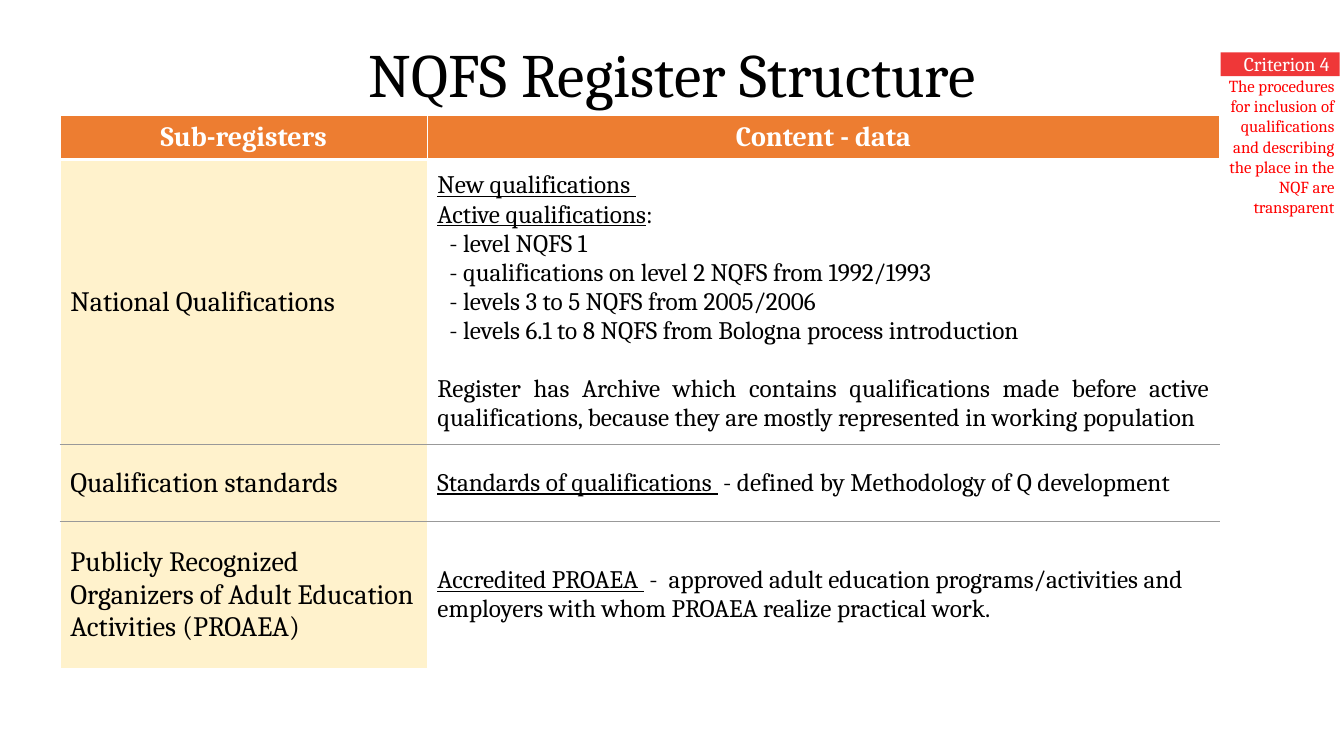
from dataclasses import dataclass

from lxml import etree
from pptx import Presentation
from pptx import util as u
from pptx.dml.color import RGBColor
from pptx.enum import shapes, text
from pptx.oxml import ns

FONT = "Cambria"
BLACK = RGBColor(0x00, 0x00, 0x00)
WHITE = RGBColor(0xFF, 0xFF, 0xFF)
ORANGE = RGBColor(0xED, 0x7D, 0x31)
CREAM = RGBColor(0xFF, 0xF2, 0xCC)
GREY = RGBColor(0x99, 0x99, 0x99)
BADGE_RED = RGBColor(0xEF, 0x37, 0x38)
RED = RGBColor(0xFF, 0x00, 0x00)
ALIGN = text.PP_ALIGN


@dataclass(frozen=True)
class Style:
    size: float
    color: RGBColor = BLACK
    bold: bool = False


@dataclass(frozen=True)
class Line:
    """A paragraph whose opening words may be underlined."""
    plain: str = ""
    underlined: str = ""
    align: ALIGN = ALIGN.LEFT
    indent: float = 0
    before: float = 0


@dataclass(frozen=True)
class Row:
    register: str
    height: float
    content: tuple[Line, ...]


@dataclass(frozen=True)
class Edge:
    color: RGBColor
    width: float


HEADER = Style(20, WHITE, True)
REGISTER = Style(20)
CONTENT = Style(18)
THIN = Edge(WHITE, 1)
THICK = Edge(WHITE, 3)
RULE = Edge(GREY, 0.75)

LEVELS = (
    "- level NQFS 1",
    "- qualifications on level 2 NQFS from 1992/1993",
    "- levels 3 to 5 NQFS from 2005/2006",
    "- levels 6.1 to 8 NQFS from Bologna process introduction",
)
HEADINGS = ("Sub-registers", "Content - data")
HEADER_HEIGHT = 1.02
COLUMN_WIDTHS = (9.25, 19.96)
ROWS = (
    Row("National Qualifications", 7.19, (
        Line(underlined="New qualifications "),
        Line(":", "Active qualifications"),
        *(Line(level, indent=0.3) for level in LEVELS),
        Line("Register has Archive which contains qualifications made before "
             "active qualifications, because they are mostly represented in "
             "working population", align=ALIGN.JUSTIFY, before=21),
    )),
    Row("Qualification standards", 1.93, (
        Line(" - defined by Methodology of Q development",
             "Standards of qualifications "),
    )),
    Row("Publicly Recognized Organizers of Adult Education Activities (PROAEA)",
        3.71, (
            Line(" -  approved adult education programs/activities and employers "
                 "with whom PROAEA realize practical work.", "Accredited PROAEA "),
        )),
)


def write(frame, lines: tuple[Line, ...], style: Style) -> None:
    for number, line in enumerate(lines):
        para = frame.paragraphs[0] if number == 0 else frame.add_paragraph()
        para.alignment = line.align
        if line.before:
            para.space_before = u.Pt(line.before)
        if line.indent:
            para._p.get_or_add_pPr().set("marL", str(u.Cm(line.indent)))
        for words, underline in ((line.underlined, True), (line.plain, False)):
            if not words:
                continue
            span = para.add_run()
            span.text = words
            span.font.name = FONT
            span.font.size = u.Pt(style.size)
            span.font.bold = style.bold
            span.font.underline = underline
            span.font.color.rgb = style.color


def set_edges(cell, top: Edge, bottom: Edge) -> None:
    props = cell._tc.get_or_add_tcPr()
    for tag, edge in (("a:lnL", THIN), ("a:lnR", THIN),
                      ("a:lnT", top), ("a:lnB", bottom)):
        border = etree.SubElement(props, ns.qn(tag), w=str(u.Pt(edge.width)))
        fill = etree.SubElement(border, ns.qn("a:solidFill"))
        etree.SubElement(fill, ns.qn("a:srgbClr"), val=str(edge.color))


def paint(cell, color: RGBColor | None) -> None:
    if color is None:
        cell.fill.background()
    else:
        cell.fill.solid()
        cell.fill.fore_color.rgb = color


def add_title(page) -> None:
    title = page.shapes.title
    title.left, title.top = u.Cm(2.34), u.Cm(1.02)
    title.width, title.height = u.Cm(29.21), u.Cm(1.85)
    frame = title.text_frame
    frame.word_wrap = True
    frame.auto_size = text.MSO_AUTO_SIZE.NONE
    frame.vertical_anchor = text.MSO_ANCHOR.MIDDLE
    write(frame, (Line("NQFS Register Structure", align=ALIGN.CENTER),), Style(44))
    frame.paragraphs[0].line_spacing = 0.9


def add_register_table(page) -> None:
    heights = (HEADER_HEIGHT, *(row.height for row in ROWS))
    table = page.shapes.add_table(
        len(heights), len(COLUMN_WIDTHS), u.Cm(1.52), u.Cm(2.92),
        u.Cm(sum(COLUMN_WIDTHS)), u.Cm(sum(heights))).table
    table.horz_banding = False
    for column, width in zip(table.columns, COLUMN_WIDTHS):
        column.width = u.Cm(width)
    for row, height in zip(table.rows, heights):
        row.height = u.Cm(height)

    # Heading row
    for cell, heading in zip(table.rows[0].cells, HEADINGS):
        set_edges(cell, THIN, THICK)
        paint(cell, ORANGE)
        write(cell.text_frame, (Line(heading, align=ALIGN.CENTER),), HEADER)

    # One row for each sub-register
    for number, row in enumerate(ROWS, start=1):
        top = THICK if number == 1 else RULE
        bottom = THIN if number == len(ROWS) else RULE
        parts = (((Line(row.register),), REGISTER, CREAM),
                 (row.content, CONTENT, None))
        for cell, (lines, style, color) in zip(table.rows[number].cells, parts):
            set_edges(cell, top, bottom)
            paint(cell, color)
            cell.vertical_anchor = text.MSO_ANCHOR.MIDDLE
            write(cell.text_frame, lines, style)


def fill_side_note(box, words: str, style: Style, right_margin: float) -> None:
    frame = box.text_frame
    frame.word_wrap = True
    frame.auto_size = text.MSO_AUTO_SIZE.SHAPE_TO_FIT_TEXT
    frame.vertical_anchor = text.MSO_ANCHOR.TOP
    frame.margin_left, frame.margin_right = u.Cm(0.25), u.Cm(right_margin)
    frame.margin_top = frame.margin_bottom = 0
    write(frame, (Line(words, align=ALIGN.RIGHT),), style)


def add_criterion(page) -> None:
    badge = page.shapes.add_shape(
        shapes.MSO_SHAPE.RECTANGLE, u.Cm(30.76), u.Cm(1.32), u.Cm(3), u.Cm(0.6))
    badge.shadow.inherit = False
    badge.fill.solid()
    badge.fill.fore_color.rgb = BADGE_RED
    badge.line.fill.background()
    fill_side_note(badge, "Criterion 4", Style(14, WHITE), 0.25)

    note = page.shapes.add_textbox(u.Cm(30.38), u.Cm(1.91), u.Cm(3.35), u.Cm(3.58))
    fill_side_note(note, "The procedures for inclusion of qualifications and "
                   "describing the place in the NQF are transparent",
                   Style(12, RED), 0.1)


def main() -> None:
    deck = Presentation()
    deck.slide_width, deck.slide_height = u.Cm(33.87), u.Cm(19.05)
    page = deck.slides.add_slide(deck.slide_layouts[5])
    add_criterion(page)
    add_title(page)
    add_register_table(page)
    deck.save("out.pptx")


if __name__ == "__main__":
    main()
